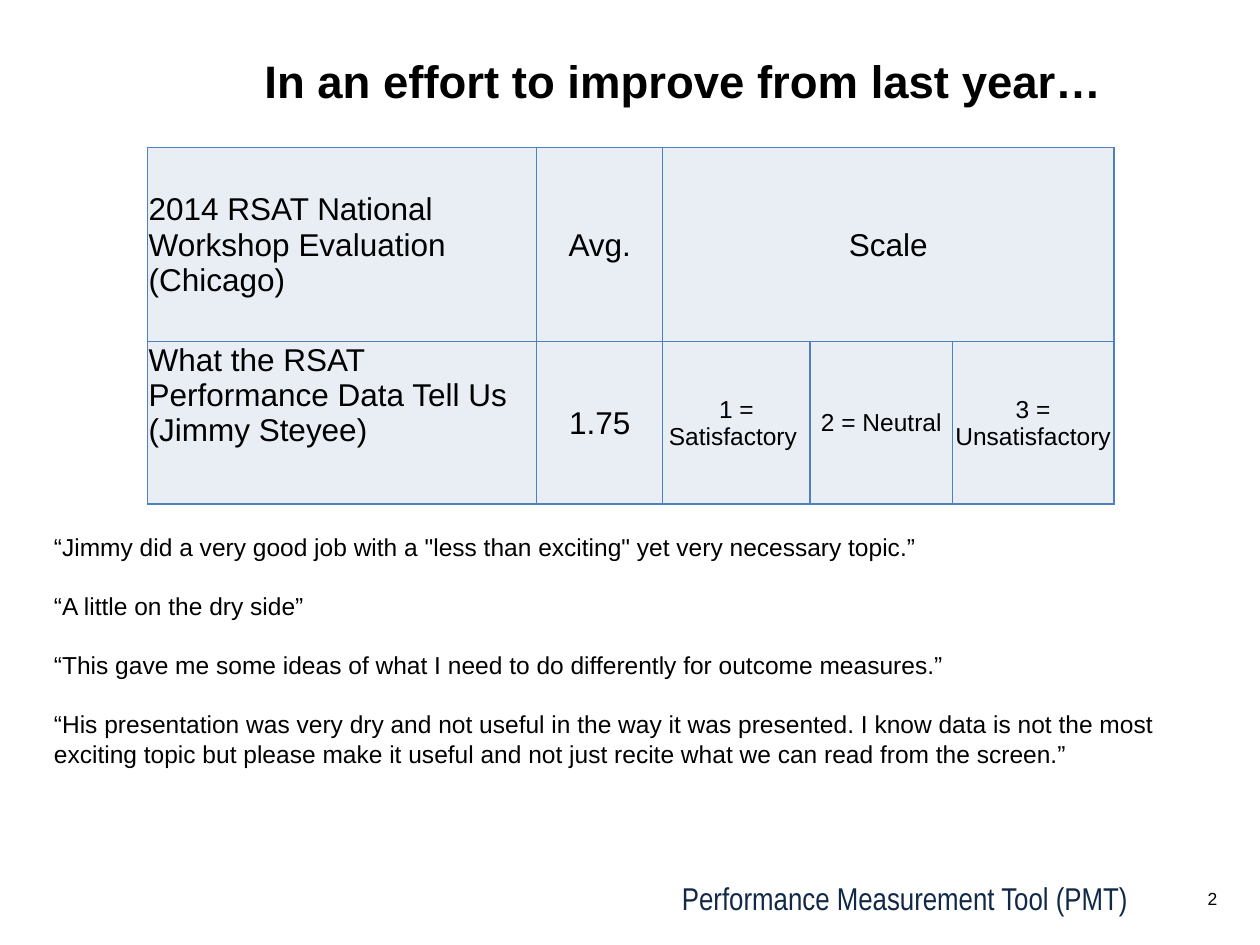
from dataclasses import dataclass

from lxml import etree
from pptx import Presentation
from pptx import util as u
from pptx.dml.color import RGBColor
from pptx.enum import text
from pptx.oxml.ns import qn


@dataclass(frozen=True)
class Theme:
    font: str = "Arial"
    footer_font: str = "Arial Narrow"
    ink: str = "000000"
    navy: str = "112947"
    cell_fill: str = "E9EDF4"
    border: str = "4F81BD"
    title_size: int = 26
    large_size: int = 18
    body_size: int = 14
    number_size: int = 10
    quote_gap: int = 17


@dataclass(frozen=True)
class TextBlock:
    left: float
    top: float
    width: float
    height: float
    paragraphs: tuple[str, ...]
    size: int
    font: str = "Arial"
    color: str = "000000"
    bold: bool = False
    right: bool = False
    wrap: bool = True
    gap: int = 0


@dataclass(frozen=True)
class TableCell:
    row: int
    column: int
    words: str
    size: int = 18
    centered: bool = True
    middle: bool = True


THEME = Theme()
LEFT, CENTER, RIGHT = (
    text.PP_ALIGN.LEFT, text.PP_ALIGN.CENTER, text.PP_ALIGN.RIGHT)

COLUMNS = (3.09, 1, 1.17, 1.13, 1.28)
ROWS = (1.54, 1.29)
CELLS = (
    TableCell(0, 0, "2014 RSAT National Workshop Evaluation (Chicago)",
              centered=False),
    TableCell(0, 1, "Avg."),
    TableCell(0, 2, "Scale"),
    TableCell(1, 0, "What the RSAT Performance Data Tell Us (Jimmy Steyee)",
              centered=False, middle=False),
    TableCell(1, 1, "1.75"),
    TableCell(1, 2, "1 = Satisfactory ", THEME.body_size),
    TableCell(1, 3, "2 = Neutral", THEME.body_size),
    TableCell(1, 4, "3 = Unsatisfactory", THEME.body_size),
)

QUOTES = (
    "“Jimmy did a very good job with a \"less than exciting\" yet very "
    "necessary topic.”",
    "“A little on the dry side”",
    "“This gave me some ideas of what I need to do differently for outcome "
    "measures.”",
    "“His presentation was very dry and not useful in the way it was "
    "presented. I know data is not the most exciting topic but please make "
    "it useful and not just recite what we can read from the screen.”",
)

BLOCKS = (
    TextBlock(4.17, 6.93, 4.88, 0.4, ("Performance Measurement Tool (PMT)",),
              THEME.large_size, THEME.footer_font, THEME.navy, right=True),
    TextBlock(9.39, 7, 0.37, 0.27, ("2",), THEME.number_size,
              right=True, wrap=False),
    TextBlock(0.33, 4.17, 9.33, 1.99, QUOTES, THEME.body_size,
              gap=THEME.quote_gap),
    TextBlock(2, 0.37, 7.08, 0.54,
              ("In an effort to improve from last year…",),
              THEME.title_size, bold=True),
)


def write_text(paragraph, words: str, *, size: int, font: str = THEME.font,
               color: str = THEME.ink, bold: bool = False,
               align=LEFT, before: int = 0) -> None:
    paragraph.alignment = align
    paragraph.space_before = u.Pt(before)
    run = paragraph.add_run()
    run.text = words
    run.font.name = font
    run.font.size = u.Pt(size)
    run.font.bold = bold
    run.font.color.rgb = RGBColor.from_string(color)


def draw_block(slide, block: TextBlock) -> None:
    shape = slide.shapes.add_textbox(
        u.Inches(block.left), u.Inches(block.top),
        u.Inches(block.width), u.Inches(block.height))
    frame = shape.text_frame
    frame.word_wrap = block.wrap
    for index, words in enumerate(block.paragraphs):
        paragraph = frame.add_paragraph() if index else frame.paragraphs[0]
        write_text(paragraph, words, size=block.size, font=block.font,
                   color=block.color, bold=block.bold,
                   align=RIGHT if block.right else LEFT,
                   before=block.gap if index else 0)


def style_cell(cell) -> None:
    properties = cell._tc.get_or_add_tcPr()
    for side in ("lnL", "lnR", "lnT", "lnB"):
        line = etree.SubElement(properties, qn(f"a:{side}"), w=str(u.Pt(1)))
        fill = etree.SubElement(line, qn("a:solidFill"))
        etree.SubElement(fill, qn("a:srgbClr"), val=THEME.border)
    cell.fill.solid()
    cell.fill.fore_color.rgb = RGBColor.from_string(THEME.cell_fill)
    cell.margin_left = cell.margin_right = cell.margin_top = u.Inches(0.01)
    cell.margin_bottom = 0


def draw_table(slide) -> None:
    table = slide.shapes.add_table(
        len(ROWS), len(COLUMNS), u.Inches(1.17), u.Inches(1.17),
        u.Inches(sum(COLUMNS)), u.Inches(sum(ROWS))).table
    table.first_row = table.horz_banding = False
    for column, width in zip(table.columns, COLUMNS):
        column.width = u.Inches(width)
    for row, height in zip(table.rows, ROWS):
        row.height = u.Inches(height)
    for cell in table.iter_cells():
        style_cell(cell)
    table.cell(0, 2).merge(table.cell(0, 4))
    for entry in CELLS:
        cell = table.cell(entry.row, entry.column)
        cell.vertical_anchor = (text.MSO_ANCHOR.MIDDLE if entry.middle
                                else text.MSO_ANCHOR.TOP)
        write_text(cell.text_frame.paragraphs[0], entry.words,
                   size=entry.size, align=CENTER if entry.centered else LEFT)


def main() -> None:
    presentation = Presentation()
    presentation.slide_width = u.Inches(10)
    presentation.slide_height = u.Inches(7.5)
    slide = presentation.slides.add_slide(presentation.slide_layouts[6])
    draw_table(slide)
    for block in BLOCKS:
        draw_block(slide, block)
    presentation.save("out.pptx")


if __name__ == "__main__":
    main()
